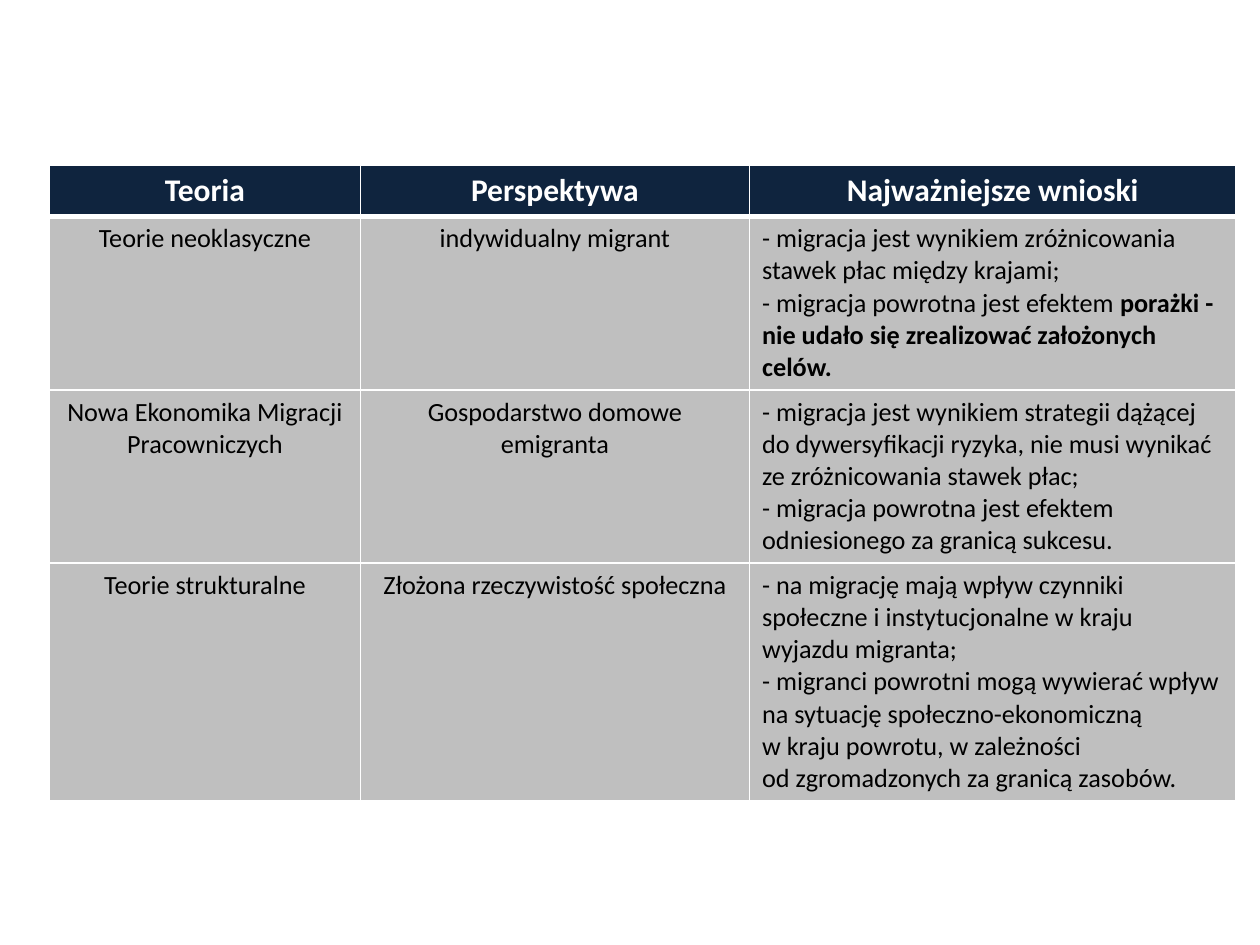
from dataclasses import dataclass

import pptx
import pptx.dml.color
import pptx.enum.text
import pptx.oxml
import pptx.oxml.ns
import pptx.util

Pt = pptx.util.Pt
RGB = pptx.dml.color.RGBColor
ALIGN = pptx.enum.text.PP_ALIGN


@dataclass(frozen=True)
class Theme:
    font: str = "Calibri"
    header_size: float = 18
    body_size: float = 15
    header_fill: str = "0F243E"
    body_fill: str = "BFBFBF"
    header_text: str = "FFFFFF"
    body_text: str = "000000"
    rule: str = "FFFFFF"
    thin: float = 1
    thick: float = 3


THEME = Theme()

HEADERS = ["Teoria", "Perspektywa", "Najważniejsze wnioski"]

# Each finding is a pair: plain text and the bold text that follows it
THEORIES = [
    ("Teorie neoklasyczne", "indywidualny migrant", [
        ("- migracja jest wynikiem zróżnicowania stawek płac między krajami;", ""),
        ("- migracja powrotna jest efektem ",
         "porażki - nie udało się zrealizować założonych celów."),
    ]),
    ("Nowa Ekonomika Migracji Pracowniczych", "Gospodarstwo domowe emigranta", [
        ("- migracja jest wynikiem strategii dążącej do dywersyfikacji ryzyka, "
         "nie musi wynikać ze zróżnicowania stawek płac;", ""),
        ("- migracja powrotna jest efektem odniesionego za granicą sukcesu.", ""),
    ]),
    ("Teorie strukturalne", "Złożona rzeczywistość społeczna", [
        ("- na migrację mają wpływ czynniki społeczne i instytucjonalne "
         "w kraju wyjazdu migranta;", ""),
        ("- migranci powrotni mogą wywierać wpływ na sytuację społeczno-ekonomiczną\v"
         "w kraju powrotu, w zależności\vod zgromadzonych za granicą zasobów.", ""),
    ]),
]

COLUMN_WIDTHS = [177.6, 222.4, 278]
ROW_HEIGHTS = [29.2, 98.7, 98.7, 135.3]


def set_borders(cell, top, bottom):
    """Draw all four cell borders; top and bottom are widths in points."""
    properties = cell._tc.get_or_add_tcPr()
    widths = {"lnL": THEME.thin, "lnR": THEME.thin, "lnT": top, "lnB": bottom}
    for side, width in widths.items():
        properties.append(pptx.oxml.parse_xml(
            f'<a:{side} {pptx.oxml.ns.nsdecls("a")} w="{Pt(width)}">'
            f'<a:solidFill><a:srgbClr val="{THEME.rule}"/></a:solidFill></a:{side}>'))


def fill_cell(cell, findings, row, align):
    """Write the paragraphs of one cell and style it by its row."""
    is_header = row == 0
    set_borders(cell,
                top=THEME.thick if row == 1 else THEME.thin,
                bottom=THEME.thick if is_header else THEME.thin)
    cell.fill.solid()
    cell.fill.fore_color.rgb = RGB.from_string(
        THEME.header_fill if is_header else THEME.body_fill)

    frame = cell.text_frame
    frame.text = "\n".join(plain for plain, _ in findings)
    for para, (_, strong) in zip(frame.paragraphs, findings):
        para.alignment = align
        for span in para.runs:
            span.font.bold = is_header
        if strong:
            span = para.add_run()
            span.text = strong
            span.font.bold = True
        for span in para.runs:
            span.font.name = THEME.font
            span.font.size = Pt(THEME.header_size if is_header else THEME.body_size)
            span.font.color.rgb = RGB.from_string(
                THEME.header_text if is_header else THEME.body_text)


def add_theory_table(page, left, top, width, height):
    """Comparison of migration theories in the given box."""
    table = page.shapes.add_table(
        len(ROW_HEIGHTS), len(COLUMN_WIDTHS),
        Pt(left), Pt(top), Pt(width), Pt(height)).table
    for column, column_width in zip(table.columns, COLUMN_WIDTHS):
        column.width = Pt(width * column_width / sum(COLUMN_WIDTHS))
    for row, row_height in zip(table.rows, ROW_HEIGHTS):
        row.height = Pt(height * row_height / sum(ROW_HEIGHTS))

    # Header row
    for column, header in enumerate(HEADERS):
        fill_cell(table.cell(0, column), [(header, "")], 0, ALIGN.CENTER)

    # One row per theory
    for row, (theory, perspective, findings) in enumerate(THEORIES, start=1):
        fill_cell(table.cell(row, 0), [(theory, "")], row, ALIGN.CENTER)
        fill_cell(table.cell(row, 1), [(perspective, "")], row, ALIGN.CENTER)
        fill_cell(table.cell(row, 2), findings, row, ALIGN.LEFT)


def main():
    deck = pptx.Presentation()
    deck.slide_width, deck.slide_height = Pt(720), Pt(540)
    page = deck.slides.add_slide(deck.slide_layouts[6])
    add_theory_table(page, 28.35, 94.5, sum(COLUMN_WIDTHS), sum(ROW_HEIGHTS))
    deck.save("out.pptx")


if __name__ == "__main__":
    main()
